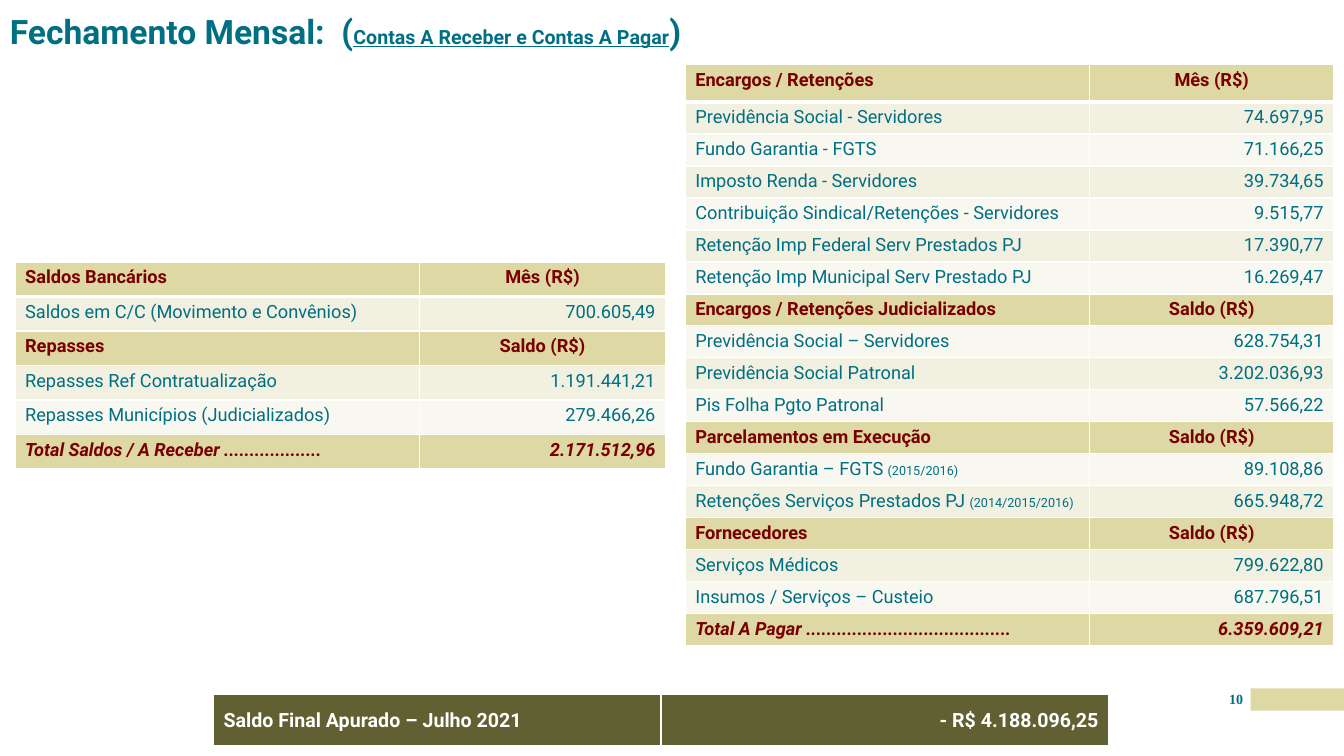
from lxml.etree import SubElement
from pptx import Presentation
from pptx.dml.color import RGBColor
from pptx.enum.shapes import MSO_SHAPE as Shape
from pptx.enum.text import MSO_ANCHOR as Anchor, PP_ALIGN as Align
from pptx.oxml.ns import qn
from pptx.util import Cm, Pt

TEAL, MAROON, SAND, OLIVE, WHITE = "006F83", "7A0000", "DED8A4", "606032", "FFFFFF"
BANDS = ["F9F8F0", "F2F0E0"]  # even rows, odd rows

color = RGBColor.from_string


def write(paragraph, text, size=13, font="Roboto", ink=TEAL, bold=False,
          italic=False, underline=False, align=None):
    run = paragraph.add_run()
    run.text = text
    run.font.name = font
    run.font.size = Pt(size)
    run.font.color.rgb = color(ink)
    run.font.bold = bold
    run.font.italic = italic
    run.font.underline = underline
    if align is not None:
        paragraph.alignment = align


def add_text_box(left, top, width, height):
    """Add a text box without margins and return its first paragraph."""
    frame = slide.shapes.add_textbox(Cm(left), Cm(top), Cm(width), Cm(height)).text_frame
    frame.word_wrap = True
    frame.margin_left = frame.margin_top = frame.margin_right = frame.margin_bottom = 0
    return frame.paragraphs[0]


presentation = Presentation()
presentation.slide_width = Cm(33.87)
presentation.slide_height = Cm(19.05)
slide = presentation.slides.add_slide(presentation.slide_layouts[6])

# Page number and its bar
bar = slide.shapes.add_shape(Shape.RECTANGLE, Cm(31.52), Cm(17.35), Cm(2.35), Cm(0.56))
bar.shadow.inherit = False
bar.fill.solid()
bar.fill.fore_color.rgb = color(SAND)
bar.line.fill.background()
write(add_text_box(30.78, 17.4, 0.74, 0.64), "10", size=10, font="Times New Roman",
      bold=True, align=Align.CENTER)

# Title
title = add_text_box(0.25, 0.38, 33.05, 1.27)
title.line_spacing = 0.9
write(title, "Fechamento Mensal:  (", size=24, bold=True)
write(title, "Contas A Receber e Contas A Pagar", size=14, bold=True, underline=True)
write(title, ")", size=24, bold=True)

# Tables: each row is kind, label, value and, where needed, the years in small print
payables = [
    ("head", "Encargos / Retenções", "Mês (R$)"),
    ("item", "Previdência Social - Servidores", "74.697,95"),
    ("item", "Fundo Garantia - FGTS", "71.166,25"),
    ("item", "Imposto Renda - Servidores", "39.734,65"),
    ("item", "Contribuição Sindical/Retenções - Servidores", "9.515,77"),
    ("item", "Retenção Imp Federal Serv Prestados PJ", "17.390,77"),
    ("item", "Retenção Imp Municipal Serv Prestado PJ", "16.269,47"),
    ("head", "Encargos / Retenções Judicializados", "Saldo (R$)"),
    ("item", "Previdência Social – Servidores", "628.754,31"),
    ("item", "Previdência Social Patronal", "3.202.036,93"),
    ("item", "Pis Folha Pgto Patronal", "57.566,22"),
    ("head", "Parcelamentos em Execução", "Saldo (R$)"),
    ("item", "Fundo Garantia – FGTS ", "89.108,86", "(2015/2016)"),
    ("item", "Retenções Serviços Prestados PJ ", "665.948,72", "(2014/2015/2016)"),
    ("head", "Fornecedores", "Saldo (R$)"),
    ("item", "Serviços Médicos", "799.622,80"),
    ("item", "Insumos / Serviços – Custeio", "687.796,51"),
    ("total", "Total A Pagar ........................................", "6.359.609,21"),
]
receivables = [
    ("head", "Saldos Bancários", "Mês (R$)"),
    ("item", "Saldos em C/C (Movimento e Convênios)", "700.605,49"),
    ("head", "Repasses", "Saldo (R$)"),
    ("item", "Repasses Ref Contratualização", "1.191.441,21"),
    ("item", "Repasses Municípios (Judicializados)", "279.466,26"),
    ("total", "Total Saldos / A Receber ...................", "2.171.512,96"),
]
balance = [("balance", "Saldo Final Apurado – Julho 2021", "- R$ 4.188.096,25")]

formats = {
    "head": dict(ink=MAROON, bold=True),
    "item": dict(ink=TEAL),
    "total": dict(ink=MAROON, bold=True, italic=True),
    "balance": dict(ink=WHITE, bold=True, size=14),
}
fills = {"head": SAND, "total": SAND, "balance": OLIVE}

# Rows, left, top, column widths, height of the first row and of the others
tables = [
    (payables, 17.27, 1.63, (10.19, 6.15), 0.94, 13.67 / 17),
    (receivables, 0.38, 6.6, (10.19, 6.2), 0.87, 0.87),
    (balance, 5.38, 17.5, (11.28, 11.28), 1.32, 1.32),
]

for rows, left, top, widths, first_height, row_height in tables:
    height = first_height + row_height * (len(rows) - 1)
    table = slide.shapes.add_table(len(rows), 2, Cm(left), Cm(top),
                                   Cm(sum(widths)), Cm(height)).table
    for column, width in zip(table.columns, widths):
        column.width = Cm(width)
    for index, (kind, label, value, *years) in enumerate(rows):
        table.rows[index].height = Cm(row_height if index else first_height)
        for cell in table.rows[index].cells:
            thick_side = {0: "lnB", 1: "lnT"}.get(index)
            for side in ("lnL", "lnR", "lnT", "lnB"):
                points = 3 if side == thick_side else 1
                border = SubElement(cell._tc.get_or_add_tcPr(), qn(f"a:{side}"), w=str(Pt(points)))
                SubElement(SubElement(border, qn("a:solidFill")), qn("a:srgbClr"), val=WHITE)
            cell.fill.solid()
            cell.fill.fore_color.rgb = color(fills.get(kind, BANDS[index % 2]))
            cell.vertical_anchor = Anchor.MIDDLE if kind == "balance" else Anchor.TOP
        label_paragraph, value_paragraph = (
            cell.text_frame.paragraphs[0] for cell in table.rows[index].cells)
        write(label_paragraph, label, **formats[kind])
        for note in years:
            write(label_paragraph, note, size=9)
        write(value_paragraph, value, **formats[kind],
              align=Align.CENTER if kind == "head" else Align.RIGHT)

presentation.save("out.pptx")
